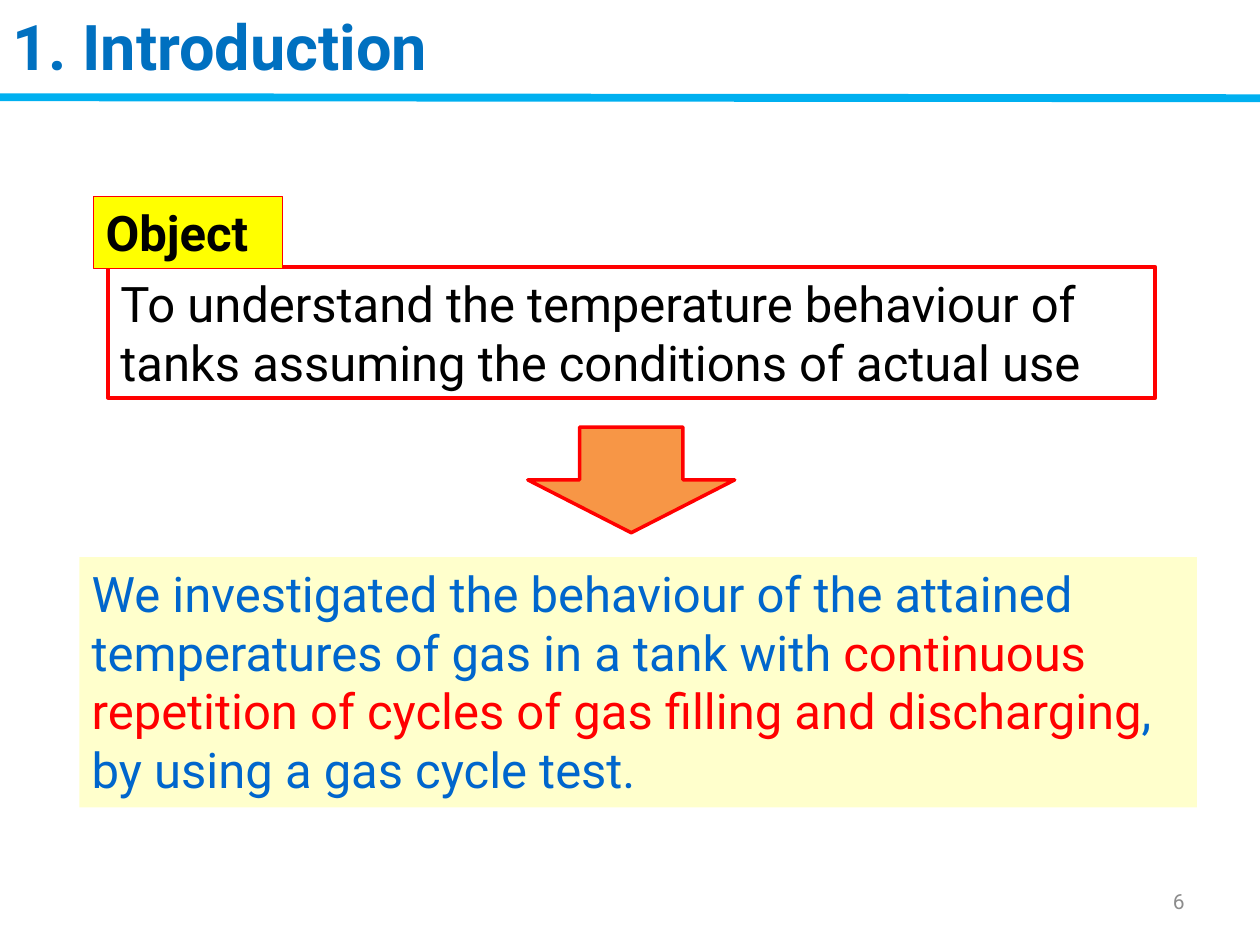
from dataclasses import dataclass

from lxml.etree import SubElement
from pptx import Presentation
from pptx.dml.color import RGBColor
from pptx.enum.shapes import MSO_CONNECTOR, MSO_SHAPE
from pptx.enum.text import MSO_ANCHOR, PP_ALIGN
from pptx.oxml.ns import qn
from pptx.util import Cm, Pt


@dataclass(frozen=True)
class Theme:
    font: str = "Roboto"
    title: str = "0070C0"
    rule: str = "00B0F0"
    ink: str = "000000"
    accent: str = "FF0000"
    method: str = "0066CC"
    paper: str = "FFFFFF"
    cream: str = "FFFFCC"
    label: str = "FFFF00"
    arrow: str = "F79646"
    muted: str = "8C8C8C"
    title_size: int = 36
    body_size: int = 28
    number_size: int = 12


T = Theme()

# Boxes are left, top, width, height in centimetres; runs are (text, colour).
TITLE = dict(box=(0, 0.03, 19.96, 1.8), runs=[("1. Introduction", T.title)],
             size=T.title_size, bold=True)
AIM = dict(
    box=(2.18, 5.38, 21.11, 2.64), fill=T.paper, line=(T.accent, 2.25),
    runs=[("To understand the temperature behaviour of tanks assuming "
           "the conditions of actual use", T.ink)],
    anchor=MSO_ANCHOR.MIDDLE)
METHOD = dict(
    box=(1.6, 11.23, 22.53, 5.05), fill=T.cream,
    runs=[("We investigated the behaviour of the attained temperatures "
           "of gas in a tank with ", T.method),
          ("continuous repetition of cycles of gas filling and discharging",
           T.accent),
          (", by using a gas cycle test.", T.method)])
ARROW = dict(box=(11.66, 7.59, 2.13, 4.17), fill=T.arrow, line=(T.accent, 2),
             kind=MSO_SHAPE.RIGHT_ARROW, rotation=90)
NUMBER = dict(box=(18.21, 17.65, 5.92, 1.02), runs=[("6", T.muted)],
              size=T.number_size, anchor=MSO_ANCHOR.MIDDLE,
              align=PP_ALIGN.RIGHT)
LABEL = dict(box=(1.88, 3.96, 3.81, 1.45), fill=T.label, line=(T.accent, 0.75),
             runs=[("Object", T.ink)], bold=True)
RULE = (0, 1.96, 25.4, 1.98)


def rgb(colour):
    return RGBColor.from_string(colour)


def write(sp, runs, size=T.body_size, bold=False, anchor=MSO_ANCHOR.TOP,
          align=PP_ALIGN.LEFT):
    tf = sp.text_frame
    tf.word_wrap = True
    tf.vertical_anchor = anchor
    p = tf.paragraphs[0]
    p.alignment = align
    for text, colour in runs:
        r = p.add_run()
        r.text = text
        r.font.name = T.font
        r.font.size = Pt(size)
        r.font.bold = bold
        r.font.color.rgb = rgb(colour)


def add_text(s, box, **text):
    write(s.shapes.add_textbox(*map(Cm, box)), **text)


def add_panel(s, box, fill, line=None, kind=MSO_SHAPE.RECTANGLE, rotation=0,
              **text):
    sp = s.shapes.add_shape(kind, *map(Cm, box))
    sp.rotation = rotation
    sp.shadow.inherit = False
    sp.fill.solid()
    sp.fill.fore_color.rgb = rgb(fill)
    if line:
        colour, width = line
        sp.line.color.rgb = rgb(colour)
        sp.line.width = Pt(width)
    else:
        sp.line.fill.background()
    if text:
        write(sp, **text)


def add_rule(s, ends):
    rule = s.shapes.add_connector(MSO_CONNECTOR.STRAIGHT, *map(Cm, ends))
    rule.line.color.rgb = rgb(T.rule)
    rule.line.width = Pt(4.5)
    SubElement(rule._element.spPr, qn("a:effectLst"))


def main():
    prs = Presentation()
    prs.slide_width, prs.slide_height = Cm(25.4), Cm(19.05)
    s = prs.slides.add_slide(prs.slide_layouts[6])
    add_rule(s, RULE)
    add_text(s, **TITLE)
    for panel in (AIM, METHOD, ARROW):
        add_panel(s, **panel)
    add_text(s, **NUMBER)
    add_panel(s, **LABEL)
    prs.save("out.pptx")


if __name__ == "__main__":
    main()
